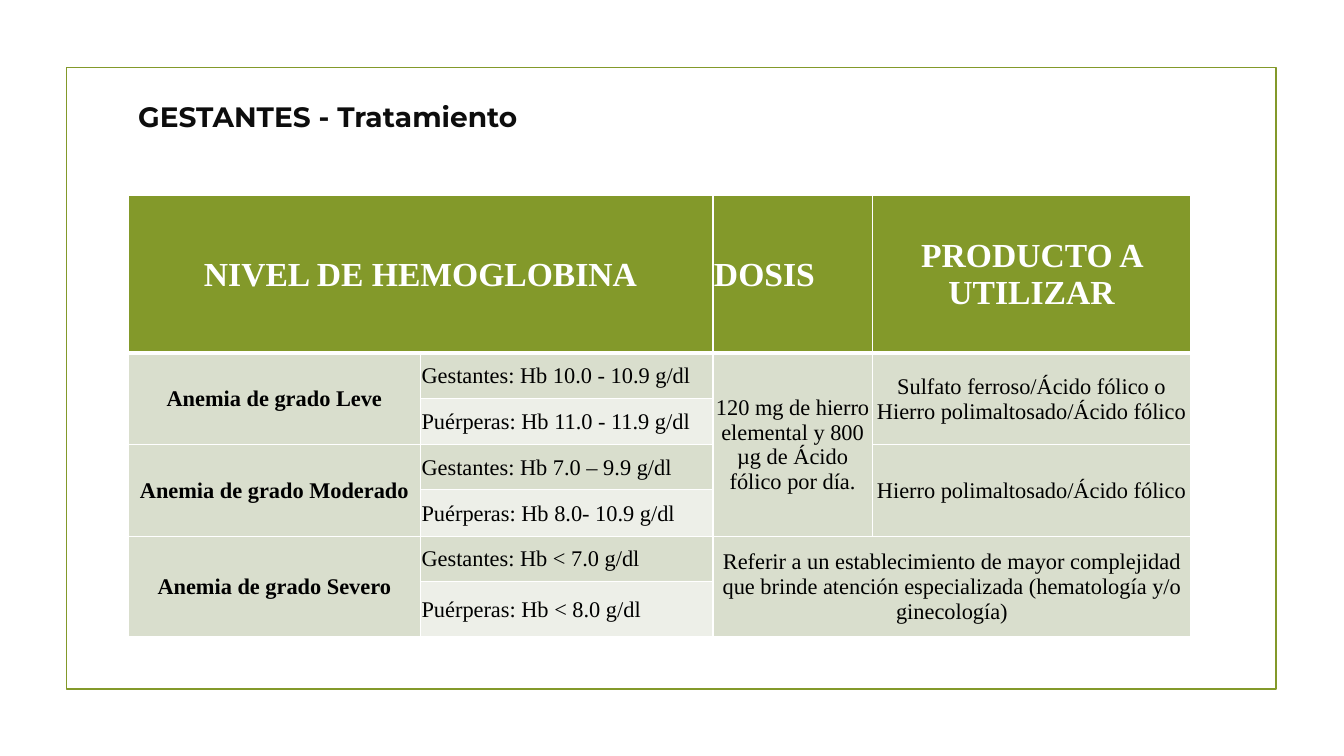
from pptx import Presentation
from pptx.dml.color import RGBColor
from pptx.enum.shapes import MSO_SHAPE as Form
from pptx.enum.text import MSO_ANCHOR as Anchor, MSO_AUTO_SIZE as Auto, PP_ALIGN as Align
from pptx.util import Inches, Pt
from lxml.etree import SubElement as Sub
from pptx.oxml.ns import qn

GREEN = RGBColor(0x83, 0x99, 0x2A)
SAGE = RGBColor(0xD9, 0xDE, 0xCD)
PALE = RGBColor(0xED, 0xEF, 0xE8)
WHITE = RGBColor(0xFF, 0xFF, 0xFF)
BLACK = RGBColor(0, 0, 0)
INK = RGBColor(0x0D, 0x0D, 0x0D)

COLS = [21.76, 21.76, 11.85, 23.71]
ROWS = [20.8, 6, 6.13, 6, 6.13, 6, 7.33]
HEADS = [(0, "NIVEL DE HEMOGLOBINA"), (2, "DOSIS"), (3, "PRODUCTO A UTILIZAR")]
GRADES = [
    ("Leve", "Gestantes: Hb 10.0 - 10.9 g/dl", "Puérperas: Hb 11.0 - 11.9 g/dl"),
    ("Moderado", "Gestantes: Hb 7.0 – 9.9 g/dl", "Puérperas: Hb 8.0- 10.9 g/dl"),
    ("Severo", "Gestantes: Hb < 7.0 g/dl", "Puérperas: Hb < 8.0 g/dl"),
]
CARE = [
    (1, 2, 4, 2, "120 mg de hierro elemental y 800 µg de Ácido fólico por día."),
    (1, 3, 2, 3, "Sulfato ferroso/Ácido fólico o Hierro polimaltosado/Ácido fólico"),
    (3, 3, 4, 3, "Hierro polimaltosado/Ácido fólico"),
    (5, 2, 6, 3, "Referir a un establecimiento de mayor complejidad que brinde "
                 "atención especializada (hematología y/o ginecología)"),
]


class Deck:
    serif, sans = "Times New Roman", "Montserrat"

    def __init__(self):
        self.prs = Presentation()
        self.prs.slide_width = Inches(13.33)
        self.prs.slide_height = Inches(7.5)
        self.slide = self.prs.slides.add_slide(self.prs.slide_layouts[5])

    def wide(self, share):
        return round(self.prs.slide_width * share / 100)

    def high(self, share):
        return round(self.prs.slide_height * share / 100)

    def box(self, x, y, w, h):
        return self.wide(x), self.high(y), self.wide(w), self.high(h)

    def style(self, para, name, size, color, bold, align):
        para.alignment = align
        font = para.font
        font.name, font.size, font.bold = name, Pt(size), bold
        font.color.rgb = color

    def frame(self, *area):
        rect = self.slide.shapes.add_shape(Form.RECTANGLE, *self.box(*area))
        rect.shadow.inherit = False
        rect.fill.background()
        rect.line.color.rgb = GREEN
        rect.line.width = Pt(1.25)

    def title(self, text, *area):
        head = self.slide.shapes.title
        head.left, head.top, head.width, head.height = self.box(*area)
        body = head.text_frame
        body.text = text
        body.word_wrap = False
        body.auto_size = Auto.SHAPE_TO_FIT_TEXT
        body.vertical_anchor = Anchor.MIDDLE
        self.style(body.paragraphs[0], self.sans, 20, INK, True, Align.LEFT)

    def edge(self, cell, side, width):
        line = Sub(cell._tc.get_or_add_tcPr(), qn(f"a:ln{side}"), w=str(Pt(width)))
        Sub(Sub(line, qn("a:solidFill")), qn("a:srgbClr"), val=str(WHITE))

    def table(self, x, y):
        area = self.box(x, y, sum(COLS), sum(ROWS))
        grid = self.slide.shapes.add_table(len(ROWS), len(COLS), *area).table
        grid.first_row = grid.horz_banding = False
        for col, share in zip(grid.columns, COLS):
            col.width = self.wide(share)
        for row, share in zip(grid.rows, ROWS):
            row.height = self.high(share)
        for r in range(len(ROWS)):
            for c in range(len(COLS)):
                cell = grid.cell(r, c)
                for side in "LRTB":
                    thick = (r, side) in [(0, "B"), (1, "T")]
                    self.edge(cell, side, 3 if thick else 1)
                cell.fill.solid()
                tint = PALE if c == 1 and r % 2 == 0 else SAGE
                cell.fill.fore_color.rgb = tint if r else GREEN
                cell.margin_left = cell.margin_right = cell.margin_top = Pt(0.75)
                cell.margin_bottom = 0
                cell.vertical_anchor = Anchor.MIDDLE
        return grid

    def cell(self, grid, row, col, text, size=16, color=BLACK, bold=False,
             align=Align.CENTER, end=None):
        cell = grid.cell(row, col)
        if end:
            cell.merge(grid.cell(*end))
        cell.text = text
        self.style(cell.text_frame.paragraphs[0], self.serif, size, color, bold, align)


def main():
    deck = Deck()
    deck.frame(4.95, 8.93, 90, 82.27)
    deck.title("GESTANTES - Tratamiento", 9.53, 12.4, 31.8, 5.87)
    grid = deck.table(9.53, 25.87)
    for col, text in HEADS:
        deck.cell(grid, 0, col, text, 24, WHITE, True,
                  Align.LEFT if col == 2 else Align.CENTER,
                  None if col else (0, 1))
    for i, (grade, *levels) in enumerate(GRADES):
        top = 1 + 2 * i
        deck.cell(grid, top, 0, f"Anemia de grado {grade}", bold=True, end=(top + 1, 0))
        for j, level in enumerate(levels):
            deck.cell(grid, top + j, 1, level, align=Align.LEFT)
    for row, col, low, right, text in CARE:
        deck.cell(grid, row, col, text, end=(low, right))
    deck.prs.save("out.pptx")


if __name__ == "__main__":
    main()
